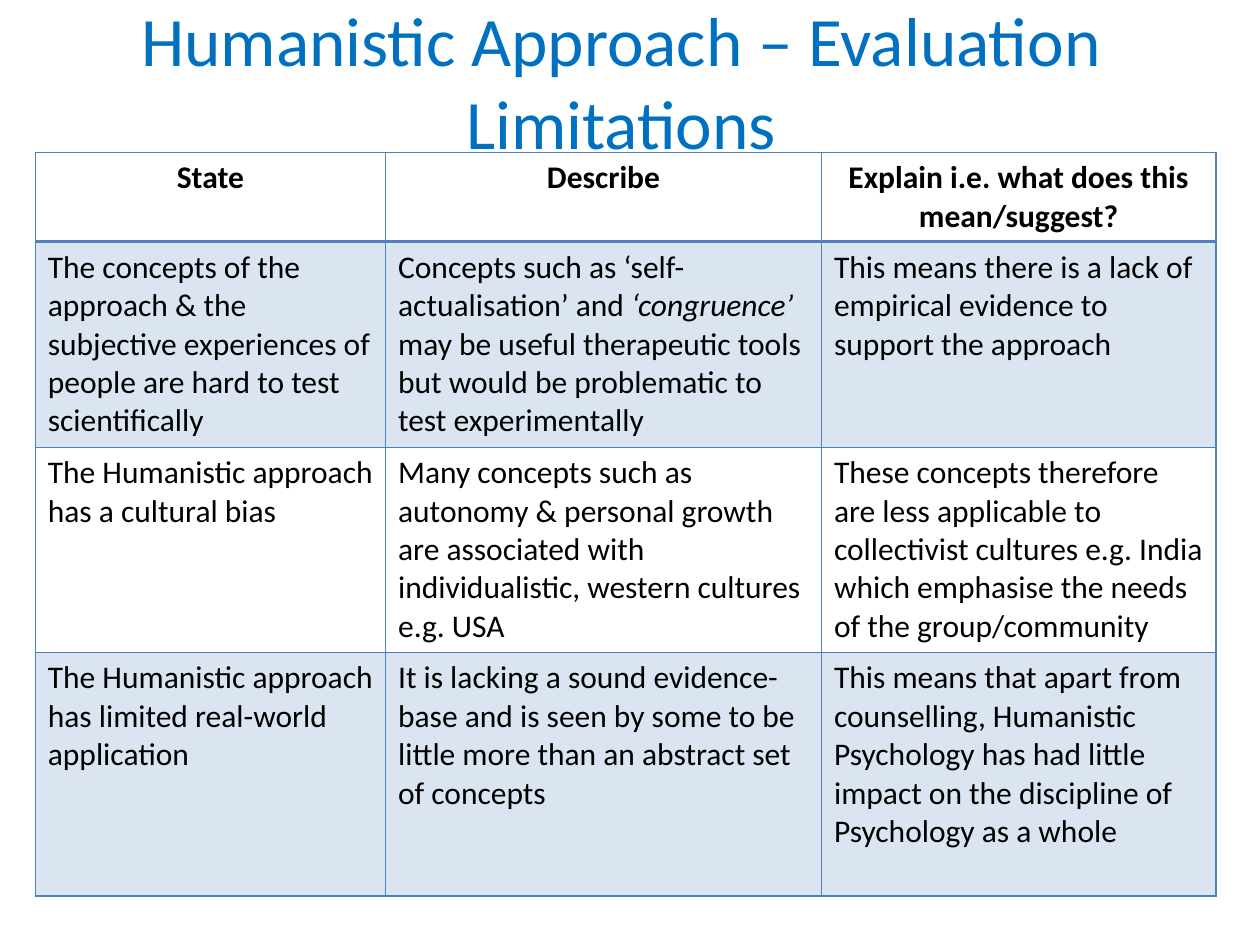
import pptx
import pptx.util
import pptx.dml.color
import pptx.enum.text
import pptx.oxml
import pptx.oxml.ns
import lxml.etree

Inches = pptx.util.Inches
Pt = pptx.util.Pt
PP_ALIGN = pptx.enum.text.PP_ALIGN
BLUE = "4F81BD"


def color(hex_string):
    return pptx.dml.color.RGBColor.from_string(hex_string)


def add_border(cell, side, width):
    namespace = pptx.oxml.ns.nsdecls("a")
    border = pptx.oxml.parse_xml(
        f'<a:{side} {namespace} w="{Pt(width)}"><a:solidFill>'
        f'<a:srgbClr val="{BLUE}"/></a:solidFill></a:{side}>'
    )
    cell._tc.get_or_add_tcPr().append(border)


presentation = pptx.Presentation()
presentation.slide_width = Inches(10)
presentation.slide_height = Inches(7.5)
slide = presentation.slides.add_slide(presentation.slide_layouts[6])

heading = slide.shapes.add_textbox(Inches(0.43), Inches(0.36), Inches(9), Inches(0.85)).text_frame
heading.word_wrap = True
heading.vertical_anchor = pptx.enum.text.MSO_ANCHOR.MIDDLE
heading.margin_bottom = Inches(0.34)
title = heading.paragraphs[0]
title.text = "Humanistic Approach – Evaluation\vLimitations"
title.alignment = PP_ALIGN.CENTER
title.font.name = "Calibri"
title.font.size = Pt(39.6)
title.font.color.rgb = color("0070C0")

limitations = [
    [["State"], ["Describe"], ["Explain i.e. what does this mean/suggest?"]],
    [
        ["The concepts of the approach & the subjective experiences of people are hard to test scientifically"],
        [
            "Concepts such as ‘self-actualisation’ and ",
            "‘congruence’ ",
            "may be useful therapeutic tools but would be problematic to test experimentally",
        ],
        ["This means there is a lack of empirical evidence to support the approach"],
    ],
    [
        ["The Humanistic approach has a cultural bias"],
        ["Many concepts such as autonomy & personal growth are associated with individualistic, western cultures e.g. USA"],
        ["These concepts therefore are less applicable to collectivist cultures e.g. India which emphasise the needs of the group/community"],
    ],
    [
        ["The Humanistic approach has limited real-world application"],
        ["It is lacking a sound evidence-base and is seen by some to be little more than an abstract set of concepts"],
        ["This means that apart from counselling, Humanistic Psychology has had little impact on the discipline of Psychology as a whole"],
    ],
]
column_widths = [2.78, 3.46, 3.13]
row_heights = [0.71, 1.63, 1.63, 1.93]

evaluation = slide.shapes.add_table(
    len(row_heights), len(column_widths), Inches(0.28), Inches(1.21),
    Inches(sum(column_widths)), Inches(sum(row_heights)),
).table
for column, width in zip(evaluation.columns, column_widths):
    column.width = Inches(width)

for row_index, (row, height) in enumerate(zip(limitations, row_heights)):
    evaluation.rows[row_index].height = Inches(height)
    is_header = row_index == 0
    for column_index, phrases in enumerate(row):
        cell = evaluation.cell(row_index, column_index)
        for side in ("lnL", "lnR", "lnT", "lnB"):
            thick = (row_index, side) in ((0, "lnB"), (1, "lnT"))
            add_border(cell, side, 2 if thick else 1)
        if row_index % 2:
            cell.fill.solid()
            cell.fill.fore_color.rgb = color(BLUE)
            tint = cell._tc.tcPr.find(pptx.oxml.ns.qn("a:solidFill"))[0]
            lxml.etree.SubElement(tint, pptx.oxml.ns.qn("a:alpha"), val="20000")
        else:
            cell.fill.background()
        statement = cell.text_frame.paragraphs[0]
        statement.alignment = PP_ALIGN.CENTER if is_header else PP_ALIGN.LEFT
        statement.font.name = "Calibri"
        statement.font.size = Pt(18)
        statement.font.bold = is_header
        statement.font.color.rgb = color("000000")
        for phrase in phrases:
            run = statement.add_run()
            run.text = phrase
            if phrase.startswith("‘"):
                run.font.italic = True

presentation.save("out.pptx")
